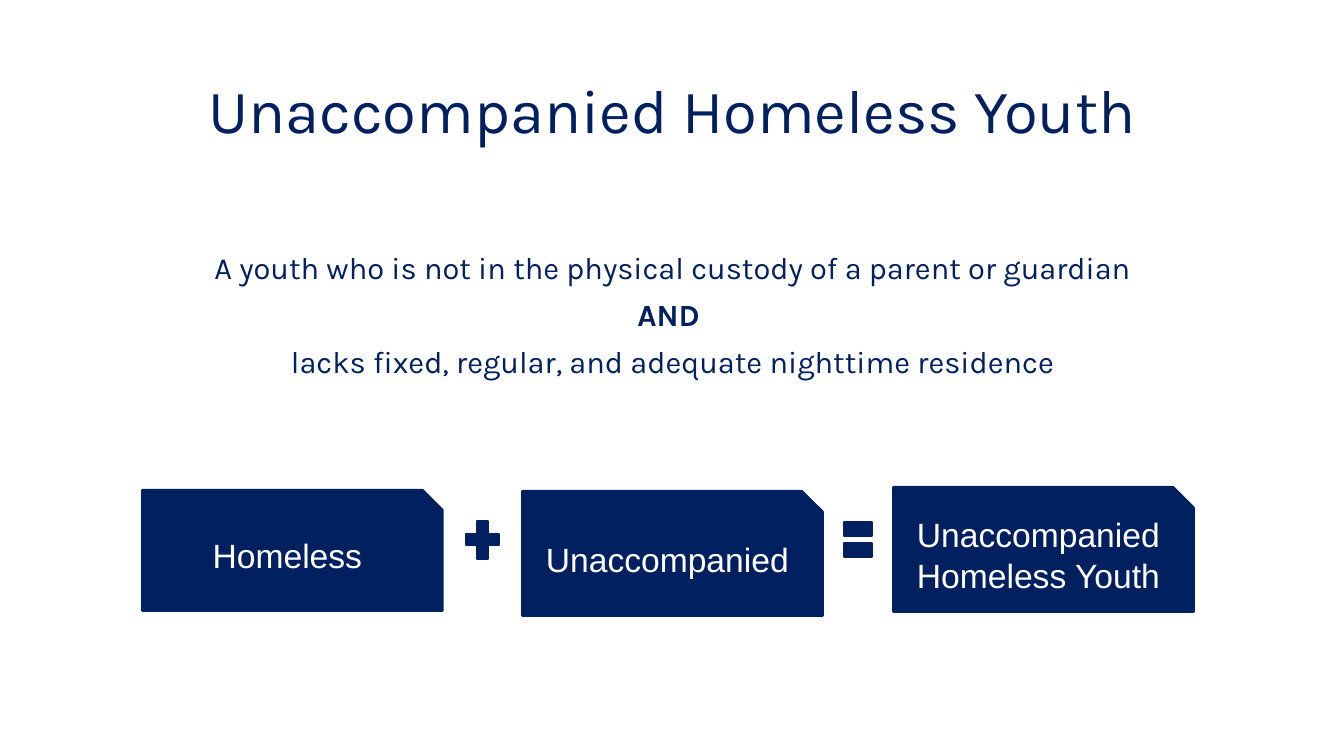
from dataclasses import dataclass

from pptx import Presentation
from pptx.dml.color import RGBColor
from pptx.enum.shapes import MSO_SHAPE as Shape
from pptx.enum.text import MSO_ANCHOR as Anchor, PP_ALIGN as Align
from pptx.util import Inches, Pt


@dataclass(frozen=True)
class Theme:
    navy: RGBColor = RGBColor(0x00, 0x20, 0x60)
    white: RGBColor = RGBColor(0xFF, 0xFF, 0xFF)
    text_font: str = "Karla"
    term_font: str = "Arial"
    title_size: int = 44
    body_size: int = 22
    term_size: int = 24
    outline: float = 1.5


THEME = Theme()


def write(para, text, *, size, font=THEME.text_font, color=THEME.navy,
          bold=False, line_spacing=1.0, space_before=0):
    para.alignment = Align.CENTER
    para.line_spacing = line_spacing
    para.space_before = Pt(space_before)
    span = para.add_run()
    span.text = text
    span.font.name = font
    span.font.size = Pt(size)
    span.font.bold = bold
    span.font.color.rgb = color


def place_title(page, text):
    title = page.shapes.title
    title.left, title.top = Inches(0.92), Inches(0.4)
    title.width, title.height = Inches(11.5), Inches(1.45)
    frame = title.text_frame
    frame.vertical_anchor = Anchor.MIDDLE
    write(frame.paragraphs[0], text, size=THEME.title_size, line_spacing=0.9)


def add_definition(page, lines):
    box = page.shapes.add_textbox(Inches(0.92), Inches(2.46), Inches(11.5), Inches(1.5))
    frame = box.text_frame
    frame.word_wrap = True
    for index, (text, bold) in enumerate(lines):
        para = frame.add_paragraph() if index else frame.paragraphs[0]
        write(para, text, size=THEME.body_size, bold=bold, line_spacing=0.9,
              space_before=10 if index else 0)


def add_navy_shape(page, kind, left, top, width, height):
    shape = page.shapes.add_shape(kind, Inches(left), Inches(top), Inches(width), Inches(height))
    shape.shadow.inherit = False
    shape.fill.solid()
    shape.fill.fore_color.rgb = THEME.navy
    shape.line.color.rgb = THEME.navy
    shape.line.width = Pt(THEME.outline)
    return shape


def add_term(page, text, left, top, height):
    card = add_navy_shape(page, Shape.SNIP_1_RECTANGLE, left, top, 2.98, height)
    frame = card.text_frame
    frame.word_wrap = True
    frame.vertical_anchor = Anchor.MIDDLE
    write(frame.paragraphs[0], text, size=THEME.term_size, font=THEME.term_font,
          color=THEME.white)


def main():
    deck = Presentation()
    deck.slide_width, deck.slide_height = Inches(13.33), Inches(7.5)
    page = deck.slides.add_slide(deck.slide_layouts[5])
    place_title(page, "Unaccompanied Homeless Youth")
    add_definition(page, [
        ("A youth who is not in the physical custody of a parent or guardian", False),
        ("AND ", True),
        ("lacks fixed, regular, and adequate nighttime residence", False),
    ])
    for text, left, top, height in [
        ("Homeless", 1.41, 4.86, 1.2),
        ("Unaccompanied", 5.18, 4.87, 1.24),
        ("Unaccompanied Homeless Youth", 8.86, 4.83, 1.24),
    ]:
        add_term(page, text, left, top, height)
    add_navy_shape(page, Shape.MATH_PLUS, 4.56, 5.1, 0.45, 0.51)
    add_navy_shape(page, Shape.MATH_EQUAL, 8.32, 5.06, 0.38, 0.59)
    deck.save("out.pptx")


if __name__ == "__main__":
    main()
